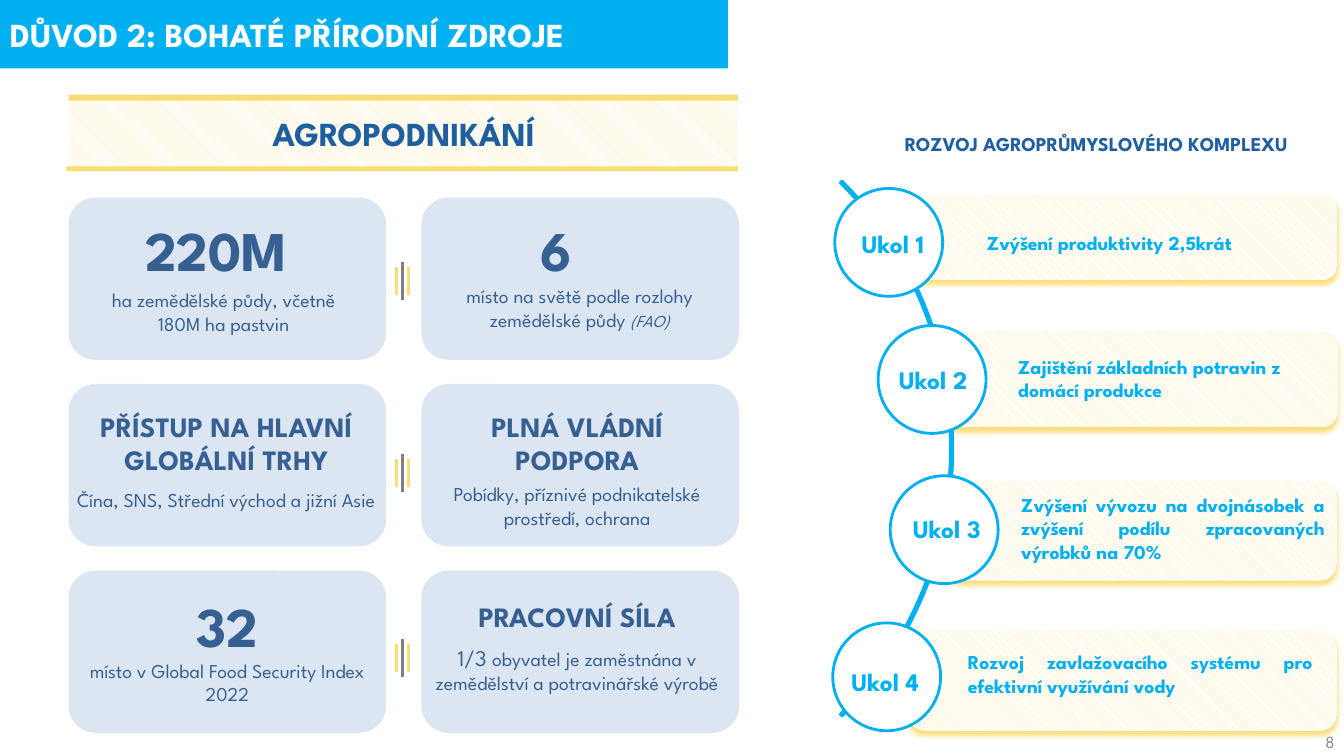
from lxml.etree import SubElement
from pptx import Presentation
from pptx.dml.color import RGBColor
from pptx.enum.dml import MSO_PATTERN
from pptx.enum.shapes import MSO_CONNECTOR, MSO_SHAPE
from pptx.enum.text import MSO_ANCHOR, MSO_AUTO_SIZE, PP_ALIGN
from pptx.oxml.ns import qn
from pptx.util import Inches, Pt

SKY, NAVY, SLATE = "00B0F0", "1F5FA0", "376092"
YELLOW, PALE_YELLOW, PALE_BLUE = "FBDD76", "FDE8A4", "DCE6F2"
WHITE, GRAY, PAGE_GRAY = "FFFFFF", "808080", "8C8C8C"
LEFT, CENTER, RIGHT, JUSTIFY = PP_ALIGN.LEFT, PP_ALIGN.CENTER, PP_ALIGN.RIGHT, PP_ALIGN.JUSTIFY


def paint(fill, color):
    """Give a shape, line or font fill one solid colour."""
    fill.solid()
    fill.fore_color.rgb = RGBColor.from_string(color)


def write(frame, paragraphs, color, align=CENTER, name="League Spartan"):
    """Fill a frame; each paragraph is (points after, [(text, size, style), ...])."""
    frame.word_wrap = True
    for index, (after, spans) in enumerate(paragraphs):
        para = frame.paragraphs[0] if index == 0 else frame.add_paragraph()
        para.alignment = align
        para.space_after = Pt(after)
        for text, size, style in spans:
            span = para.add_run()
            span.text = text
            paint(span.font.fill, color)
            for key, value in {"name": name, "size": Pt(size), **style}.items():
                setattr(span.font, key, value)


BOLD, PLAIN, ITALIC = {"bold": True}, {"bold": False}, {"italic": True}

deck = Presentation()
deck.slide_width, deck.slide_height = Inches(13.33), Inches(7.5)
page = deck.slides.add_slide(deck.slide_layouts[6])

# Hatched task panels, then the hatched section heading
hatched = [
    (9.02, 1.93, 4.24, 0.85),
    (9.24, 3.29, 4.03, 0.95),
    (9.38, 4.77, 3.88, 0.99),
    (9.01, 6.26, 4.25, 0.99),
    (0.68, 0.94, 6.64, 0.72),
]
for place in hatched:
    is_heading = place == hatched[-1]
    kind = MSO_SHAPE.RECTANGLE if is_heading else MSO_SHAPE.ROUNDED_RECTANGLE
    panel = page.shapes.add_shape(kind, *map(Inches, place))
    panel.fill.patterned()
    panel.fill.pattern = MSO_PATTERN.LIGHT_DOWNWARD_DIAGONAL
    panel.fill.fore_color.rgb = RGBColor.from_string(PALE_YELLOW)
    panel.fill.back_color.rgb = RGBColor.from_string(WHITE)
    panel.line.fill.background()
    panel.shadow.inherit = False
    if not is_heading:
        effects = panel._element.spPr.find(qn("a:effectLst"))
        shadow = SubElement(effects, qn("a:outerShdw"), blurRad=str(Pt(4)), dist=str(Pt(3)),
                            dir="5400000", algn="t", rotWithShape="0")
        SubElement(shadow, qn("a:srgbClr"), val=YELLOW)

# Arc with one circle per task
timeline = page.shapes.add_group_shape()
arc = timeline.shapes.add_shape(MSO_SHAPE.BLOCK_ARC, Inches(1.95), Inches(0.7),
                                Inches(7.5), Inches(7.5))
for index, value in enumerate((189, 27, 0.003)):
    arc.adjustments[index] = value
arc.fill.background()
circles = [
    timeline.shapes.add_shape(MSO_SHAPE.OVAL, Inches(left), Inches(top), Inches(1.07), Inches(1.07))
    for left, top in ((8.28, 1.87), (8.71, 3.23), (8.83, 4.72), (8.26, 6.18))
]
for circle in circles:
    paint(circle.fill, WHITE)
for outline in [arc, *circles]:
    paint(outline.line.fill, SKY)
    outline.line.width = Pt(2)
    outline.shadow.inherit = False

# Title bar, heading rules and the grid of cards
cards = [(MSO_SHAPE.ROUNDED_RECTANGLE, (left, 1.96 + 1.85 * row, 3.15, 1.61), PALE_BLUE)
         for row in range(3) for left in (0.68, 4.18)]
solids = [
    (MSO_SHAPE.RECTANGLE, (0.66, 1.65, 6.66, 0.05), YELLOW),
    (MSO_SHAPE.RECTANGLE, (0.68, 0.94, 6.64, 0.06), YELLOW),
    *cards,
    (MSO_SHAPE.RECTANGLE, (0, 0, 7.22, 0.68), SKY),
]
for kind, place, color in solids:
    block = page.shapes.add_shape(kind, *map(Inches, place))
    paint(block.fill, color)
    block.line.fill.background()
    block.shadow.inherit = False
title_bar = block
title_bar.text_frame.vertical_anchor = MSO_ANCHOR.MIDDLE
write(title_bar.text_frame, [(0, [("DŮVOD 2: BOHATÉ PŘÍRODNÍ ZDROJE", 24, BOLD)])], WHITE, LEFT)

# Three strokes between the cards of each row
for middle in (2.79, 4.69, 6.53):
    strokes = page.shapes.add_group_shape()
    for x, half, color in ((3.99, 0.19, GRAY), (4.05, 0.14, YELLOW), (3.93, 0.14, YELLOW)):
        stroke = strokes.shapes.add_connector(MSO_CONNECTOR.STRAIGHT, Inches(x), Inches(middle - half),
                                              Inches(x), Inches(middle + half))
        paint(stroke.line.fill, color)
        stroke.line.width = Pt(2.25)
        SubElement(stroke._element.spPr, qn("a:effectLst"))

# Place, colour, alignment, paragraphs
labels = [
    ((8.36, 2.22, 0.99, 0.4), "Ukol 1"),
    ((8.73, 3.57, 1.05, 0.4), "Ukol 2"),
    ((8.9, 5.04, 0.98, 0.4), "Ukol 3"),
    ((8.3, 6.56, 0.96, 0.4), "Ukol 4"),
]
tasks = [
    ((9.69, 2.24, 3.52, 0.34), LEFT, "Zvýšení produktivity 2,5krát"),
    ((10, 3.47, 3.26, 0.57), LEFT, "Zajištění základních potravin z domácí produkce"),
    ((10.03, 4.84, 3.21, 0.81), JUSTIFY,
     "Zvýšení vývozu na dvojnásobek a zvýšení podílu zpracovaných výrobků na 70%"),
    ((9.5, 6.4, 3.62, 0.57), JUSTIFY, "Rozvoj zavlažovacího systému pro efektivní využívání vody"),
]
facts = [
    ((0.82, 2.09, 2.8, 1.3), [(4, [("220M ", 40, BOLD)]),
                              (4, [("ha zemědělské půdy, včetně 180M ha pastvin", 14, PLAIN)])]),
    ((3.94, 2.09, 3.16, 0.78), [(0, [("6", 40, BOLD)])]),
    ((4.17, 2.77, 3.16, 0.57), [(4, [("místo na světě podle rozlohy zemědělské půdy ", 14, PLAIN),
                                     ("(FAO)", 12, ITALIC)])]),
    ((0.65, 4.01, 3.19, 1.36), [(8, [("PŘÍSTUP NA HLAVNÍ GLOBÁLNÍ TRHY", 20, BOLD)]),
                                (4, [("Čína, SNS, Střední východ a jižní Asie", 14, PLAIN)])]),
    ((4.13, 4.01, 3.19, 1.3), [(4, [("PLNÁ VLÁDNÍ PODPORA", 20, BOLD)]),
                               (8, [("Pobídky, příznivé podnikatelské prostředí, ochrana", 14, PLAIN)])]),
    ((0.68, 5.82, 3.15, 1.25), [(0, [("32", 40, BOLD)]),
                                (4, [("místo v Global Food Security Index 2022", 14, PLAIN)])]),
    ((4.13, 5.9, 3.19, 1.29), [(8, [("PRACOVNÍ SÍLA", 20, BOLD)]),
                               (8, [("1/3 ", 16, PLAIN),
                                    ("obyvatel je zaměstnána v zemědělství a potravinářské výrobě", 14, PLAIN)])]),
]
texts = [
    ((0.68, 1.07, 6.65, 0.5), NAVY, CENTER, [(0, [("AGROPODNIKÁNÍ", 24, BOLD)])]),
    *[(place, SLATE, CENTER, paragraphs) for place, paragraphs in facts],
    *[(place, SKY, CENTER, [(0, [(text, 18, BOLD)])]) for place, text in labels],
    *[(place, SKY, align, [(0, [(text, 14, BOLD)])]) for place, align, text in tasks],
    ((8.39, 1.21, 4.97, 0.36), NAVY, CENTER, [(0, [("ROZVOJ AGROPRŮMYSLOVÉHO KOMPLEXU", 14, BOLD)])]),
]
for place, color, align, paragraphs in texts:
    box = page.shapes.add_textbox(*map(Inches, place))
    box.text_frame.auto_size = MSO_AUTO_SIZE.SHAPE_TO_FIT_TEXT
    write(box.text_frame, paragraphs, color, align)
tasks_heading = box
tasks_heading.text_frame.paragraphs[0].line_spacing = 1.2

page_number = page.shapes.add_textbox(Inches(10.33), Inches(7.16), Inches(3), Inches(0.4))
page_number.text_frame.vertical_anchor = MSO_ANCHOR.MIDDLE
write(page_number.text_frame, [(0, [("8", 12, PLAIN)])], PAGE_GRAY, RIGHT, "Calibri")

deck.save("out.pptx")
